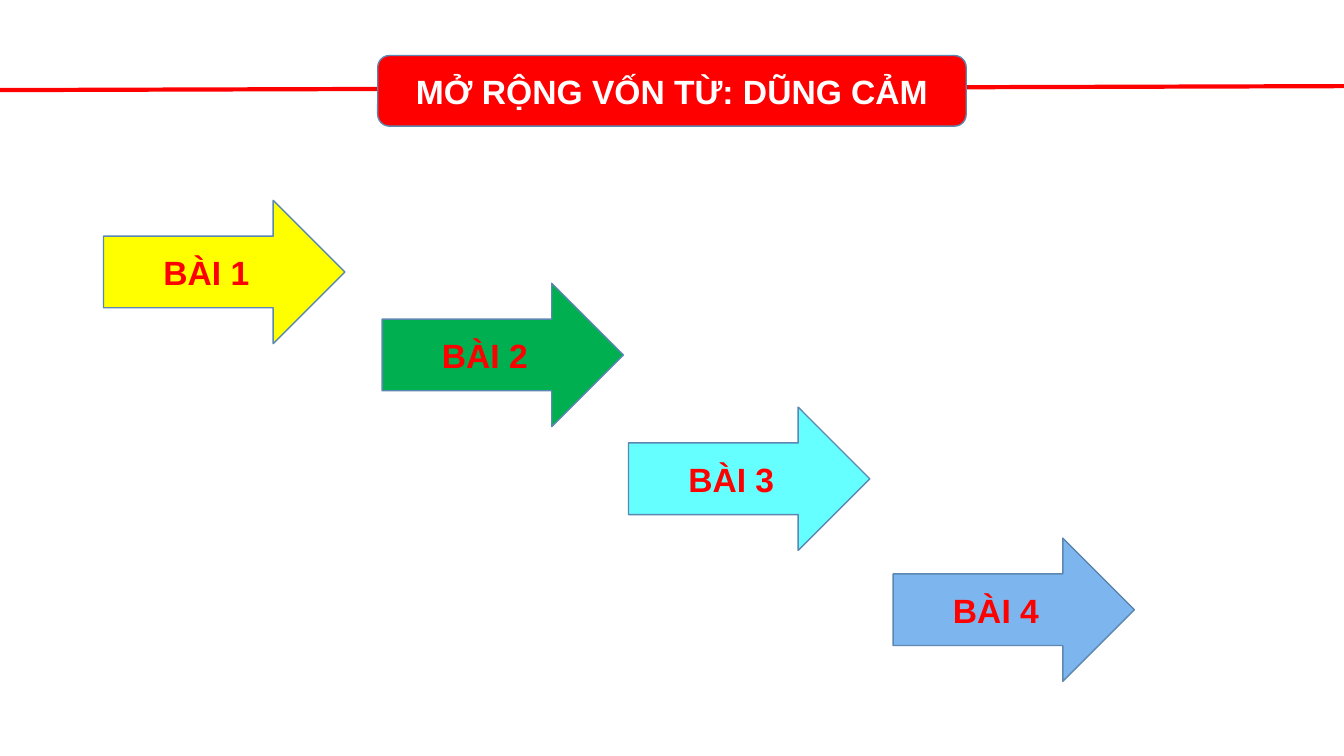
from dataclasses import dataclass

from lxml.etree import SubElement
from pptx import Presentation
from pptx.dml.color import RGBColor
from pptx.enum.shapes import MSO_CONNECTOR, MSO_SHAPE
from pptx.enum.text import MSO_ANCHOR, PP_ALIGN
from pptx.oxml.ns import qn
from pptx.slide import Slide
from pptx.util import Cm, Pt


@dataclass(frozen=True)
class Theme:
    font: str = "Arial"
    size: float = 24
    red: str = "FF0000"
    white: str = "FFFFFF"
    edge: str = "5C87B1"
    yellow: str = "FFFF00"
    green: str = "00B050"
    cyan: str = "66FFFF"
    blue: str = "7DB6EF"
    edge_width: float = 1
    rule_width: float = 3


@dataclass(frozen=True)
class Block:
    """A filled shape with centred text; lengths in centimetres."""
    text: str
    left: float
    top: float
    fill: str
    ink: str
    width: float = 6.08
    height: float = 3.61
    kind: MSO_SHAPE = MSO_SHAPE.RIGHT_ARROW


THEME = Theme()
WIDTH, HEIGHT = 33.87, 19.05

TITLE = Block("MỞ RỘNG VỐN TỪ: DŨNG CẢM", 9.52, 1.4, THEME.red, THEME.white,
              14.83, 1.78, MSO_SHAPE.ROUNDED_RECTANGLE)
STEPS = (
    (2.61, 5.05, THEME.yellow),
    (9.63, 7.14, THEME.green),
    (15.84, 10.26, THEME.cyan),
    (22.51, 13.56, THEME.blue),
)


def draw_rule(slide: Slide) -> None:
    rule = slide.shapes.add_connector(
        MSO_CONNECTOR.STRAIGHT, Cm(0), Cm(2.27), Cm(WIDTH), Cm(2.17))
    rule.line.color.rgb = RGBColor.from_string(THEME.red)
    rule.line.width = Pt(THEME.rule_width)
    SubElement(rule._element.spPr, qn("a:effectLst"))


def draw_block(slide: Slide, block: Block) -> None:
    shape = slide.shapes.add_shape(
        block.kind, Cm(block.left), Cm(block.top),
        Cm(block.width), Cm(block.height))
    shape.shadow.inherit = False
    shape.fill.solid()
    shape.fill.fore_color.rgb = RGBColor.from_string(block.fill)
    shape.line.color.rgb = RGBColor.from_string(THEME.edge)
    shape.line.width = Pt(THEME.edge_width)

    frame = shape.text_frame
    frame.word_wrap = True
    frame.vertical_anchor = MSO_ANCHOR.MIDDLE
    label = frame.paragraphs[0]
    label.text = block.text
    label.alignment = PP_ALIGN.CENTER
    label.font.name = THEME.font
    label.font.size = Pt(THEME.size)
    label.font.bold = True
    label.font.color.rgb = RGBColor.from_string(block.ink)


def main() -> None:
    deck = Presentation()
    deck.slide_width, deck.slide_height = Cm(WIDTH), Cm(HEIGHT)
    slide = deck.slides.add_slide(deck.slide_layouts[6])
    draw_rule(slide)
    draw_block(slide, TITLE)
    for number, (left, top, fill) in enumerate(STEPS, start=1):
        draw_block(slide, Block(f"BÀI {number}", left, top, fill, THEME.red))
    deck.save("out.pptx")


if __name__ == "__main__":
    main()
